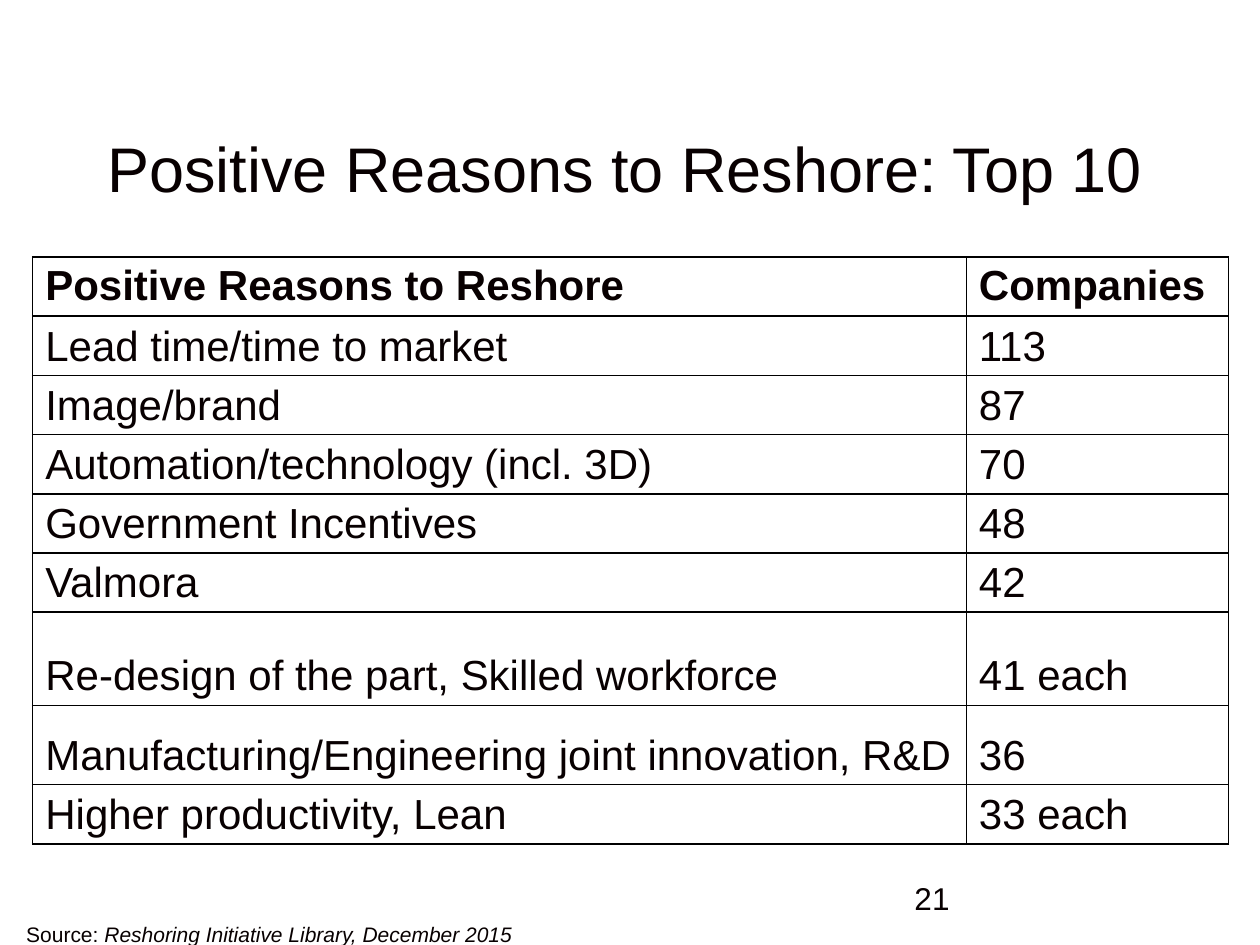
from dataclasses import dataclass, field

from lxml.etree import SubElement
from pptx import Presentation
from pptx.dml.color import RGBColor
from pptx.enum.text import MSO_ANCHOR as Anchor, MSO_AUTO_SIZE as AutoSize, PP_ALIGN as Align
from pptx.oxml.ns import qn
from pptx.util import Inches, Pt

WIDTH, HEIGHT = 10, 7.5
COLORS = {"text": "080001", "border": "000000"}
TITLE_ONLY = 5

COLUMN_WIDTHS = [7.41, 2.08]
ROW_HEIGHT = 0.47
TALL_ROWS = {6: 0.74, 7: 0.63}
REASONS = [
    ("Positive Reasons to Reshore", "Companies"),
    ("Lead time/time to market", "113"),
    ("Image/brand", "87"),
    ("Automation/technology (incl. 3D)", "70"),
    ("Government Incentives", "48"),
    ("Valmora", "42"),
    ("Re-design of the part, Skilled workforce", "41 each"),
    ("Manufacturing/Engineering joint innovation, R&D", "36"),
    ("Higher productivity, Lean", "33 each"),
]


@dataclass
class SlideBuilder:
    slide: object
    font: str = "Arial"
    colors: dict = field(default_factory=lambda: COLORS)

    def box(self, left, top, width, height):
        """Turn shares of the slide's size into lengths."""
        return (Inches(left * WIDTH), Inches(top * HEIGHT),
                Inches(width * WIDTH), Inches(height * HEIGHT))

    def run(self, paragraph, text, size, bold=False, italic=False):
        run = paragraph.add_run()
        run.text = text
        run.font.name = self.font
        run.font.size = Pt(size)
        run.font.bold = bold
        run.font.italic = italic
        run.font.color.rgb = RGBColor.from_string(self.colors["text"])

    def title(self, text, area):
        title = self.slide.shapes.title
        title.left, title.top, title.width, title.height = self.box(*area)
        frame = title.text_frame
        frame.auto_size = AutoSize.NONE
        frame.vertical_anchor = Anchor.MIDDLE
        paragraph = frame.paragraphs[0]
        paragraph.alignment = Align.CENTER
        self.run(paragraph, text, 36)

    def text(self, runs, area, size):
        """Add a text box from (text, italic) pairs."""
        frame = self.slide.shapes.add_textbox(*self.box(*area)).text_frame
        frame.word_wrap = True
        for text, italic in runs:
            self.run(frame.paragraphs[0], text, size, italic=italic)

    def borders(self, cell):
        properties = cell._tc.get_or_add_tcPr()
        for index, side in enumerate(("lnL", "lnR", "lnT", "lnB")):
            line = properties.makeelement(qn(f"a:{side}"), {"w": str(Pt(1))})
            fill = SubElement(line, qn("a:solidFill"))
            SubElement(fill, qn("a:srgbClr"), val=self.colors["border"])
            properties.insert(index, line)

    def table(self, rows, area):
        table = self.slide.shapes.add_table(len(rows), len(COLUMN_WIDTHS), *self.box(*area)).table
        table.horz_banding = False
        for column, width in zip(table.columns, COLUMN_WIDTHS):
            column.width = Inches(width)
        for row_index, values in enumerate(rows):
            table.rows[row_index].height = Inches(TALL_ROWS.get(row_index, ROW_HEIGHT))
            header = row_index == 0
            for column_index, value in enumerate(values):
                cell = table.cell(row_index, column_index)
                cell.fill.background()
                cell.margin_top = cell.margin_bottom = Pt(3.2)
                cell.vertical_anchor = Anchor.TOP if header else Anchor.BOTTOM
                self.run(cell.text_frame.paragraphs[0], value, 24, bold=header)
                self.borders(cell)


def main():
    presentation = Presentation()
    presentation.slide_width, presentation.slide_height = Inches(WIDTH), Inches(HEIGHT)
    layout = presentation.slide_layouts[TITLE_ONLY]
    builder = SlideBuilder(presentation.slides.add_slide(layout))

    table_height = sum(TALL_ROWS.get(row, ROW_HEIGHT) for row in range(len(REASONS)))
    table_area = (0.026, 0.272, sum(COLUMN_WIDTHS) / WIDTH, table_height / HEIGHT)
    builder.table(REASONS, table_area)
    builder.title("Positive Reasons to Reshore: Top 10", (0.067, 0.132, 0.858, 0.09))
    source = [("Source: ", False), ("Reshoring Initiative Library, December 2015", True)]
    builder.text(source, (0.011, 0.969, 0.958, 0.033), 12)
    builder.text([("21", False)], (0.716, 0.924, 0.233, 0.067), 18)

    presentation.save("out.pptx")


if __name__ == "__main__":
    main()
